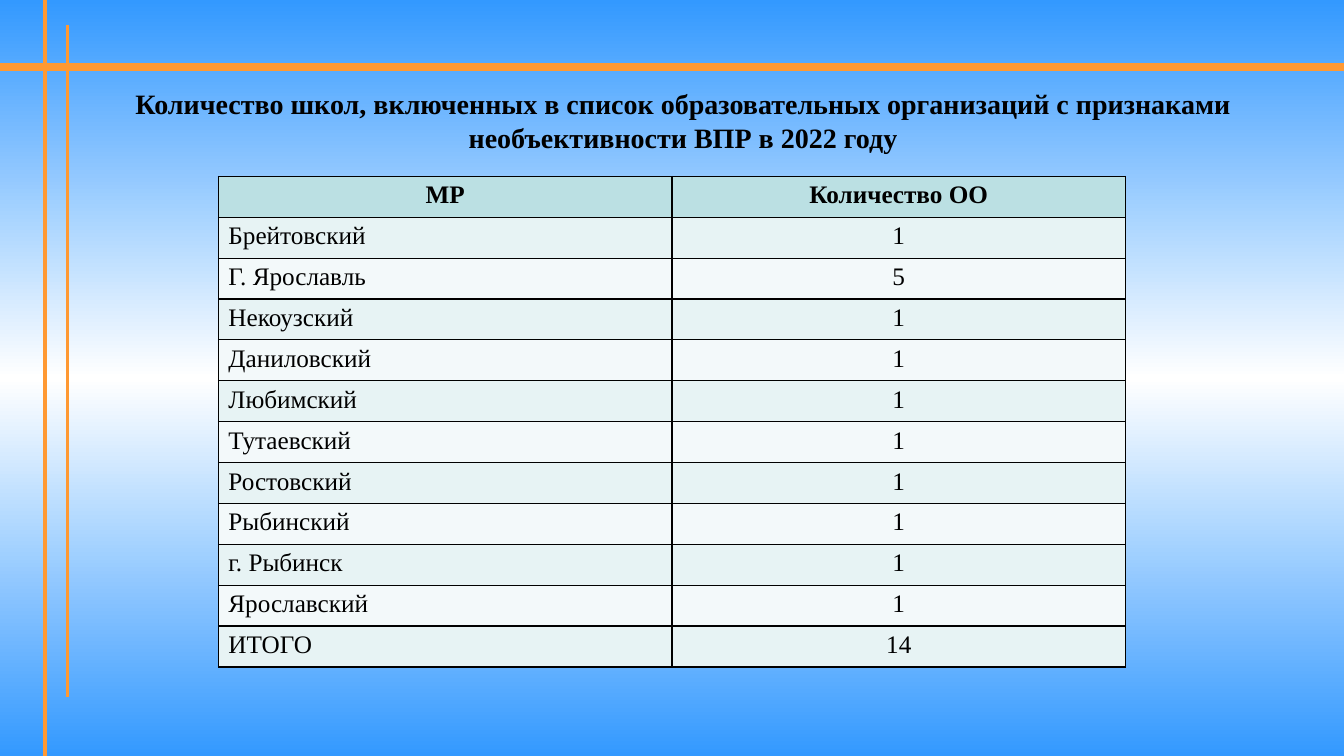
from pptx import Presentation
from pptx.dml.color import RGBColor
from pptx.enum.shapes import MSO_CONNECTOR as CONN
from pptx.enum.text import MSO_ANCHOR as ANCHOR, PP_ALIGN as ALIGN
from pptx.oxml import parse_xml
from pptx.oxml.ns import nsdecls
from pptx.util import Pt

W, H = 960, 540
FONT = "Times New Roman"
ORANGE, BLUE, WHITE, BLACK = "FF9933", "3399FF", "FFFFFF", "000000"
HEADER_FILL, BAND_FILLS = "BBE0E3", ("E7F3F4", "F3F9FA")

TITLE = ("Количество школ, включенных в список образовательных организаций "
         "с признаками необъективности ВПР в 2022 году")
ROWS = [
    ("МР", "Количество ОО"),
    ("Брейтовский", "1"),
    ("Г. Ярославль", "5"),
    ("Некоузский", "1"),
    ("Даниловский", "1"),
    ("Любимский", "1"),
    ("Тутаевский", "1"),
    ("Ростовский", "1"),
    ("Рыбинский", "1"),
    ("г. Рыбинск", "1"),
    ("Ярославский", "1"),
    ("ИТОГО", "14"),
]


def rgb(color):
    return RGBColor.from_string(color)


def set_background(s, stops):
    gs = "".join(f'<a:gs pos="{pos * 1000}"><a:srgbClr val="{color}"/></a:gs>'
                 for pos, color in stops)
    bg = parse_xml(
        f'<p:bg {nsdecls("p", "a")}><p:bgPr><a:gradFill rotWithShape="1">'
        f'<a:gsLst>{gs}</a:gsLst><a:lin ang="5400000" scaled="1"/></a:gradFill>'
        '<a:effectLst/></p:bgPr></p:bg>')
    s.element.cSld.insert(0, bg)


def add_line(s, x1, y1, x2, y2, width):
    sp = s.shapes.add_connector(CONN.STRAIGHT, Pt(x1), Pt(y1), Pt(x2), Pt(y2))
    sp.line.color.rgb = rgb(ORANGE)
    sp.line.width = Pt(width)
    sp.element.spPr.append(parse_xml(f'<a:effectLst {nsdecls("a")}/>'))


def write(tf, text, size, bold, align):
    p = tf.paragraphs[0]
    p.text = text
    p.alignment = align
    p.font.name = FONT
    p.font.size = Pt(size)
    p.font.bold = bold
    p.font.color.rgb = rgb(BLACK)


def add_title(s, text, x, y, w, h):
    tf = s.shapes.add_textbox(Pt(x), Pt(y), Pt(w), Pt(h)).text_frame
    tf.word_wrap = True
    tf.vertical_anchor = ANCHOR.MIDDLE
    write(tf, text, 20, True, ALIGN.CENTER)


def set_borders(cell, color, width):
    tcPr = cell._tc.get_or_add_tcPr()
    for side in "LRTB":
        tcPr.append(parse_xml(
            f'<a:ln{side} {nsdecls("a")} w="{Pt(width)}"><a:solidFill>'
            f'<a:srgbClr val="{color}"/></a:solidFill></a:ln{side}>'))


def add_table(s, rows, x, y, w, row_h):
    frame = s.shapes.add_table(len(rows), len(rows[0]), Pt(x), Pt(y),
                               Pt(w), Pt(row_h * len(rows)))
    table = frame.table
    for i, row in enumerate(rows):
        table.rows[i].height = Pt(row_h)
        header = i == 0
        fill = HEADER_FILL if header else BAND_FILLS[(i - 1) % 2]
        for j, text in enumerate(row):
            cell = table.cell(i, j)
            align = ALIGN.CENTER if header or j else ALIGN.LEFT
            write(cell.text_frame, text, 18, header, align)
            set_borders(cell, BLACK, 1)
            cell.fill.solid()
            cell.fill.fore_color.rgb = rgb(fill)


def main():
    prs = Presentation()
    prs.slide_width, prs.slide_height = Pt(W), Pt(H)
    s = prs.slides.add_slide(prs.slide_layouts[6])

    # Backdrop: gradient and orange rules
    set_background(s, [(0, BLUE), (50, WHITE), (100, BLUE)])
    add_line(s, 0, 48, W, 48, 6)
    add_line(s, 32, 0, 32, H, 3)
    add_line(s, 48, 18, 48, 498, 2.25)

    # Title and table of districts
    add_title(s, TITLE, 40, 48, 896, 76)
    add_table(s, ROWS, 156, 126, 648, 29.2)

    prs.save("out.pptx")


if __name__ == "__main__":
    main()
